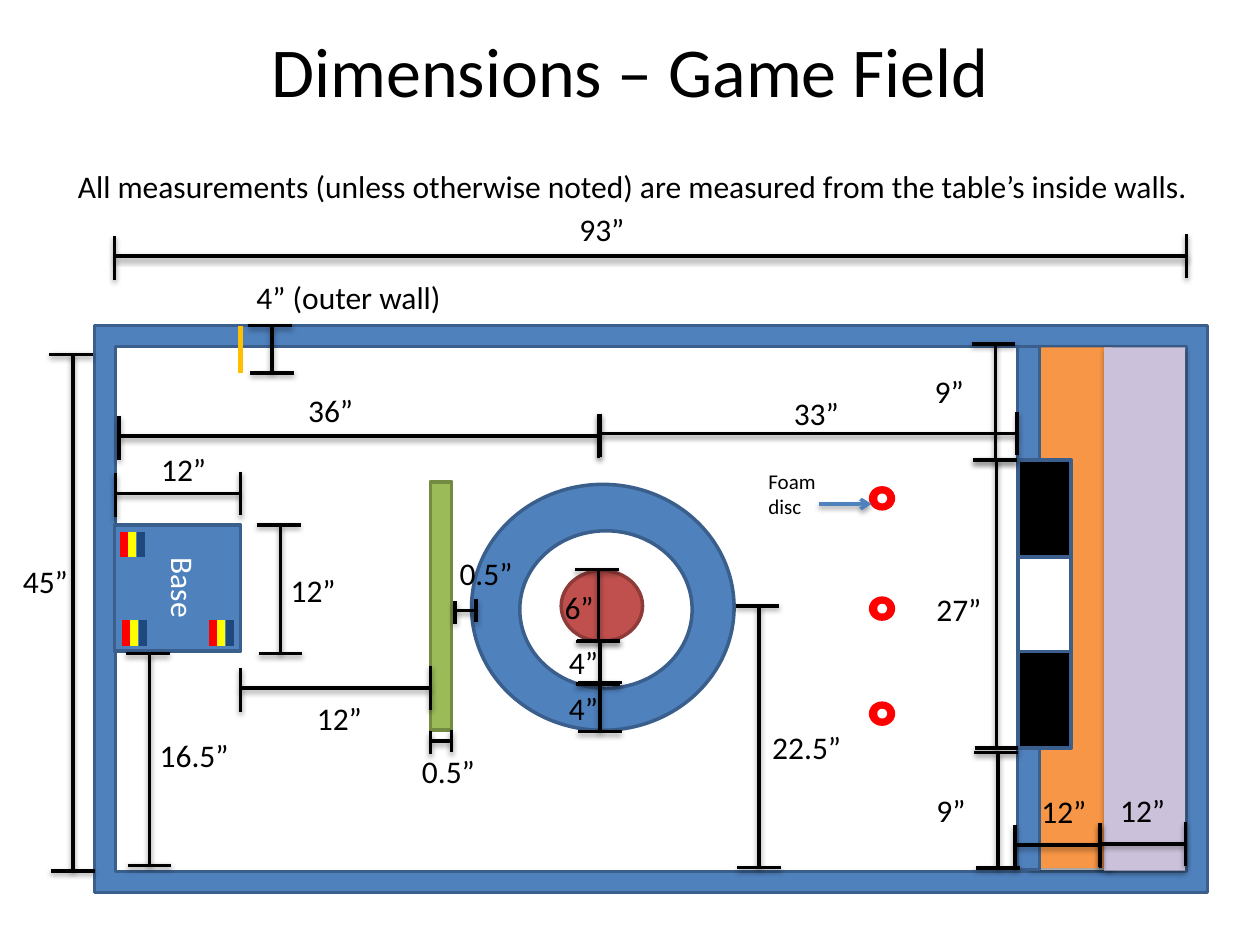
from typing import NamedTuple

from lxml import etree
from pptx import Presentation
from pptx.dml.color import RGBColor
from pptx.enum import shapes, text
from pptx.oxml import ns
from pptx.util import Pt

BLUE, BLUE_EDGE = "4F81BD", "3A5F8C"
BLACK, WHITE, RED = "000000", "FFFFFF", "FF0000"
RECT, OVAL = shapes.MSO_SHAPE.RECTANGLE, shapes.MSO_SHAPE.OVAL


class Area(NamedTuple):
    left: float
    top: float
    width: float
    height: float
    fill: str
    edge: str | None = BLUE_EDGE
    kind: shapes.MSO_SHAPE = RECT
    shadow: bool = False


class Dimension(NamedTuple):
    """A measure from start to end along one axis, at a fixed place on the other."""
    label: str
    label_left: float
    label_top: float
    vertical: bool
    at: float
    start: float
    end: float
    cap: float = 25


FIELD = [
    Area(54, 186, 636, 324, BLUE),
    Area(66, 198, 612, 300, WHITE),
    Area(269.5, 276.8, 150, 140.5, BLUE, kind=OVAL),
    Area(297, 303.3, 98.5, 90, WHITE, kind=OVAL),
    Area(320.7, 326, 46.5, 40.5, "C0504D", "8E3B39", OVAL),
    Area(65.5, 300, 72, 72, BLUE),
    Area(587.5, 198.5, 48, 297.5, "F79646", None, shadow=True),
    Area(581.4, 198, 12.5, 299, BLUE),
    Area(246, 275.3, 12.2, 142, "9BBB59", "738A42"),
    Area(631, 198.5, 46.3, 299, "CCC1DA", None, shadow=True),
    Area(582, 262.8, 30, 55.4, BLACK),
    Area(582, 318.2, 30, 55.4, WHITE),
    Area(582, 372.2, 30, 55.4, BLACK),
]
DISC_TOPS = (278.8, 341.8, 401.8)
FLAGS = ((70.8, 304), (121.7, 354.5), (72, 354.5))
FLAG_COLOURS = (RED, "FFFF00", "1F497D")

DIMENSIONS = [
    Dimension("12”", 85, 253.5, False, 282, 66, 137.5),
    Dimension("12”", 159, 322.5, True, 160.3, 300, 373.5),
    Dimension("6”", 315.5, 332.5, True, 342, 325.5, 366),
    Dimension("4”", 318, 363.8, True, 342.8, 366.5, 390),
    Dimension("4”", 318, 390, True, 342.8, 391, 418),
    Dimension("4” (outer wall)", 139.5, 155.5, True, 155.5, 186, 213),
    Dimension("93”", 324, 116.6, False, 146.4, 65.5, 678),
    Dimension("45”", 6, 317.5, True, 41.6, 202.5, 497.7),
    Dimension("12”", 633, 448.5, False, 482.3, 629, 677.5),
    Dimension("12”", 588, 449, False, 483, 580, 628.5),
    Dimension("12”", 174, 396, False, 393.2, 137.5, 246),
    Dimension("36”", 169, 219.8, False, 249.2, 68, 342),
    Dimension("0.5”", 234, 426, False, 423.5, 246, 258, 13),
    Dimension("0.5”", 255.5, 313, False, 349, 260, 272, 13),
    Dimension("33”", 446.5, 221.7, False, 247.8, 343.3, 581.3),
    Dimension("27”", 528, 333.5, True, 569.5, 263, 427.5),
    Dimension("9”", 528, 448.5, True, 570.3, 430, 496),
    Dimension("9”", 527, 209, True, 568.8, 196.5, 263),
    Dimension("16.5”", 84.2, 417, True, 85.5, 373.5, 494.5),
    Dimension("22.5”", 434.2, 412.7, True, 433.8, 346.3, 495.7),
]


def colour(value: str) -> RGBColor:
    return RGBColor.from_string(value)


def add_effects(properties, shadow: bool) -> None:
    """Give a shape its own effect list, empty or with a soft shadow below."""
    effects = properties.find(ns.qn("a:effectLst"))
    if effects is None:
        effects = etree.SubElement(properties, ns.qn("a:effectLst"))
    if shadow:
        outer = etree.SubElement(effects, ns.qn("a:outerShdw"), blurRad=str(Pt(3.1)),
                                 dist=str(Pt(1.6)), dir="5400000", rotWithShape="0")
        tint = etree.SubElement(outer, ns.qn("a:srgbClr"), val=BLACK)
        etree.SubElement(tint, ns.qn("a:alpha"), val="38000")


def draw_area(slide, area: Area) -> None:
    shape = slide.shapes.add_shape(area.kind, *map(Pt, area[:4]))
    shape.shadow.inherit = False
    shape.fill.solid()
    shape.fill.fore_color.rgb = colour(area.fill)
    if area.edge:
        shape.line.color.rgb = colour(area.edge)
        shape.line.width = Pt(2)
    else:
        shape.line.fill.background()
    if area.shadow:
        add_effects(shape._element.spPr, True)


def draw_line(slide, x1: float, y1: float, x2: float, y2: float, *, ink: str = BLACK,
              width: float = 2, shadow: bool = False, arrow: bool = False) -> None:
    line = slide.shapes.add_connector(shapes.MSO_CONNECTOR.STRAIGHT, *map(Pt, (x1, y1, x2, y2)))
    line.line.color.rgb = colour(ink)
    line.line.width = Pt(width)
    if arrow:
        etree.SubElement(line.line._get_or_add_ln(), ns.qn("a:tailEnd"), type="arrow")
    add_effects(line._element.spPr, shadow)


def write(box, words: str, *, left: float, top: float, width: float, height: float = 29,
          size: float = 18, ink: str = BLACK, centred: bool = False, wrap: bool = False,
          rotation: float = 0) -> None:
    """Place a box and fill it with formatted text."""
    box.left, box.top, box.width, box.height = map(Pt, (left, top, width, height))
    box.rotation = rotation
    frame = box.text_frame
    frame.word_wrap = wrap
    frame.auto_size = text.MSO_AUTO_SIZE.SHAPE_TO_FIT_TEXT
    para = frame.paragraphs[0]
    para.alignment = text.PP_ALIGN.CENTER if centred else text.PP_ALIGN.LEFT
    span = para.add_run()
    span.text = words
    span.font.name = "Calibri"
    span.font.size = Pt(size)
    span.font.color.rgb = colour(ink)


def new_box(slide):
    return slide.shapes.add_textbox(0, 0, 0, 0)


def draw_dimension(slide, dim: Dimension) -> None:
    half = dim.cap / 2
    shift = -1 if dim.vertical else 1
    segments = [
        (dim.start, dim.at - half + shift, dim.start, dim.at + half + shift),
        (dim.end, dim.at - half, dim.end, dim.at + half),
        (dim.start, dim.at, dim.end, dim.at),
    ]
    for x1, y1, x2, y2 in segments:
        ends = (y1, x1, y2, x2) if dim.vertical else (x1, y1, x2, y2)
        draw_line(slide, *ends, shadow=True)
    write(new_box(slide), dim.label, left=dim.label_left, top=dim.label_top,
          width=20 + 7 * len(dim.label))


def draw_flag(slide, left: float, top: float) -> None:
    for index, ink in enumerate(FLAG_COLOURS):
        x = left + 4.8 * index
        draw_line(slide, x, top, x, top + 14.4, ink=ink, width=4.5)


def draw_disc(slide, top: float) -> None:
    draw_area(slide, Area(497.5, top, 13, 12, RED, RED, OVAL))
    draw_area(slide, Area(502.3, top + 4.2, 3.6, 3.6, WHITE, WHITE, OVAL))


def main() -> None:
    deck = Presentation()
    deck.slide_width, deck.slide_height = Pt(720), Pt(540)
    slide = deck.slides.add_slide(deck.slide_layouts[5])
    write(slide.shapes.title, "Dimensions – Game Field", left=0, top=12, width=720,
          height=55.5, size=40, centred=True, wrap=True)

    for area in FIELD:
        draw_area(slide, area)
    draw_line(slide, 137.5, 186.5, 137.5, 213, ink="FFC000", width=3)
    write(new_box(slide), "Base", left=79.5, top=321.3, width=50.5, ink=WHITE,
          centred=True, wrap=True, rotation=90)
    for left, top in FLAGS:
        draw_flag(slide, left, top)
    for top in DISC_TOPS:
        draw_disc(slide, top)

    write(new_box(slide), "All measurements (unless otherwise noted) are measured "
          "from the table’s inside walls.", left=37.4, top=92, width=651.6)
    for dim in DIMENSIONS:
        draw_dimension(slide, dim)
    write(new_box(slide), "Foam disc", left=432, top=264, width=60, height=36,
          size=12, wrap=True)
    draw_line(slide, 468, 288, 498, 288, ink=BLUE, shadow=True, arrow=True)
    deck.save("out.pptx")


if __name__ == "__main__":
    main()
